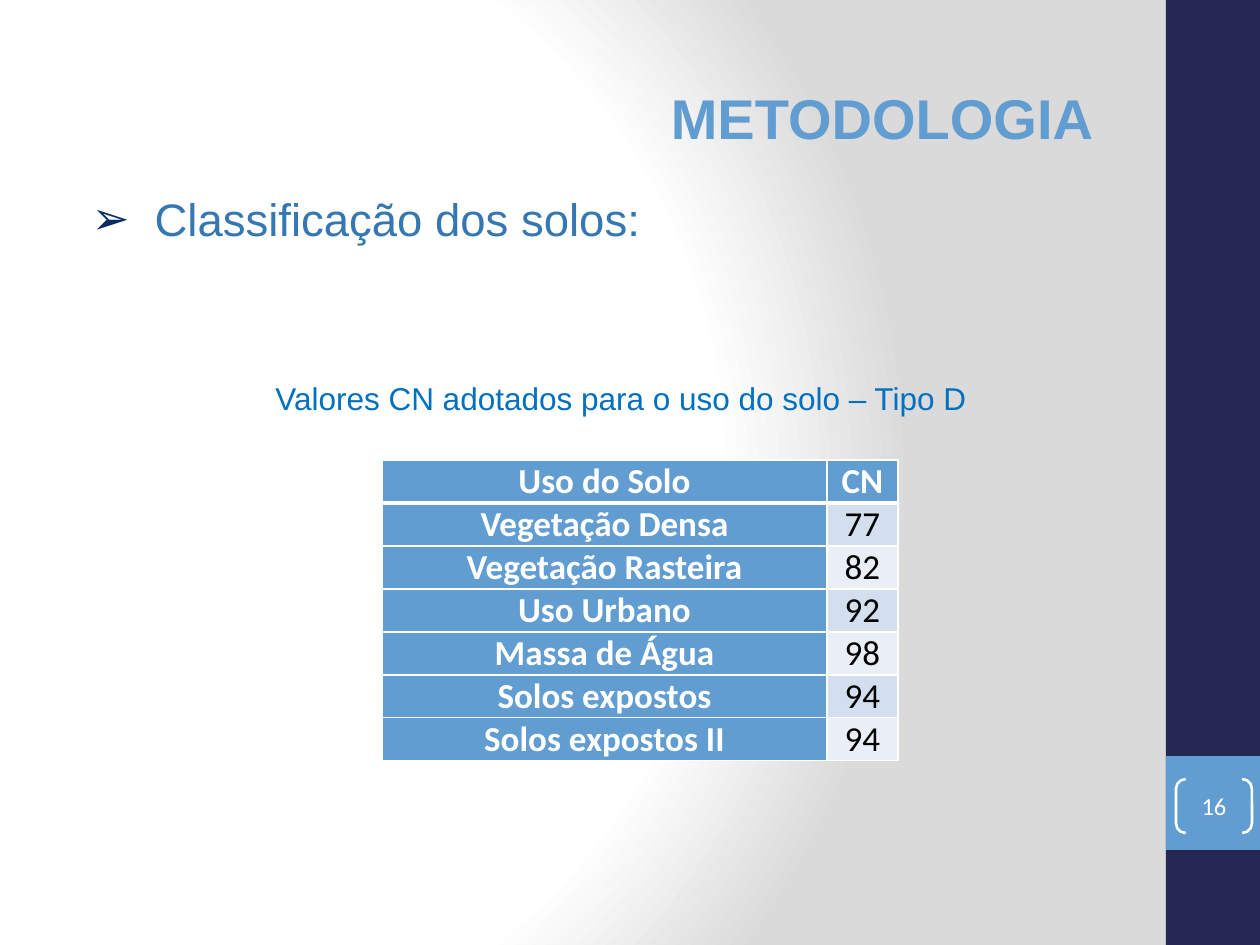
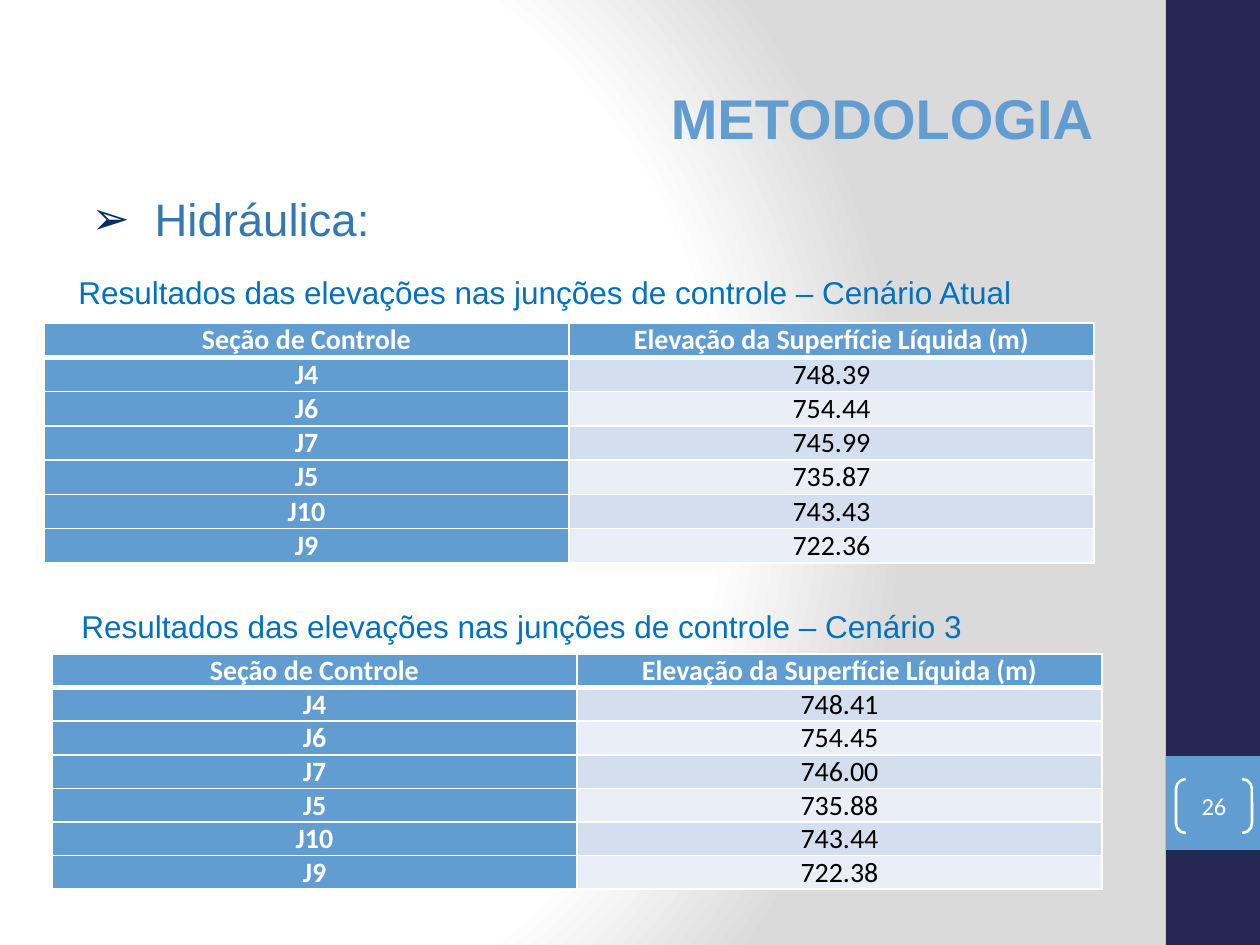
"""Build two methodology slides with soil classes and hydraulic results."""
from lxml import etree
from pptx import Presentation
from pptx.dml.color import RGBColor
from pptx.enum.shapes import MSO_SHAPE
from pptx.enum.text import MSO_ANCHOR, MSO_AUTO_SIZE, PP_ALIGN
from pptx.oxml import parse_xml
from pptx.oxml.ns import nsdecls, qn
from pptx.util import Emu, Pt

RECTANGLE = MSO_SHAPE.RECTANGLE
BRACKETS = MSO_SHAPE.DOUBLE_BRACKET
MIDDLE, TOP = MSO_ANCHOR.MIDDLE, MSO_ANCHOR.TOP
LEFT, CENTER = PP_ALIGN.LEFT, PP_ALIGN.CENTER
RIGHT, JUSTIFY = PP_ALIGN.RIGHT, PP_ALIGN.JUSTIFY
NO_AUTOFIT = MSO_AUTO_SIZE.NONE

WHITE = RGBColor(0xFF, 0xFF, 0xFF)
BLACK = RGBColor(0x00, 0x00, 0x00)
GRAY = RGBColor(0xDA, 0xDA, 0xDA)
NAVY = RGBColor(0x24, 0x28, 0x52)
SKY = RGBColor(0x62, 0x9D, 0xD1)
TOPIC_BLUE = RGBColor(0x34, 0x77, 0xB2)
BULLET_BLUE = RGBColor(0x07, 0x2C, 0x62)
CAPTION_BLUE = RGBColor(0x00, 0x70, 0xC0)
DARK_BAND = RGBColor(0xD3, 0xDF, 0xEE)
LIGHT_BAND = RGBColor(0xEA, 0xEF, 0xF7)

HEADING_FONT, TABLE_FONT = "Arial", "Calibri"
PX = 914400 / 126

SOIL_ROWS = [
    ("Uso do Solo", "CN"),
    ("Vegetação Densa", "77"),
    ("Vegetação Rasteira", "82"),
    ("Uso Urbano", "92"),
    ("Massa de Água", "98"),
    ("Solos expostos", "94"),
    ("Solos expostos II", "94"),
]
ELEVATION_HEADER = ("Seção de Controle", "Elevação da Superfície Líquida (m)")
SECTIONS = ("J4", "J6", "J7", "J5", "J10", "J9")
CURRENT_ELEVATIONS = ("748.39", "754.44", "745.99", "735.87", "743.43", "722.36")
SCENARIO_3_ELEVATIONS = ("748.41", "754.45", "746.00", "735.88", "743.44", "722.38")


def px(*lengths):
    return [Emu(round(length * PX)) for length in lengths]


class Deck:
    """Hold the shared style and the current slide."""

    def __init__(self):
        self.presentation = Presentation()
        self.presentation.slide_width, self.presentation.slide_height = px(1260, 945)
        self.slide = None
        self.set_background()

    def set_background(self):
        master = self.presentation.slide_master
        master.background.fill.solid()
        stops = "".join(
            f'<a:gs pos="{position}"><a:srgbClr val="{color}"/></a:gs>'
            for position, color in ((0, WHITE), (75000, WHITE), (100000, GRAY))
        )
        gradient = parse_xml(
            f'<a:gradFill {nsdecls("a")} rotWithShape="1"><a:gsLst>{stops}</a:gsLst>'
            '<a:path path="circle"><a:fillToRect l="20000" t="50000" r="100000" b="50000"/>'
            "</a:path></a:gradFill>"
        )
        properties = master.element.cSld.find(f'{qn("p:bg")}/{qn("p:bgPr")}')
        properties.replace(properties.find(qn("a:solidFill")), gradient)

    def style(self, paragraph, size, color, font=HEADING_FONT, bold=False, align=LEFT):
        paragraph.alignment = align
        paragraph.font.name = font
        paragraph.font.size = Pt(size)
        paragraph.font.bold = bold
        paragraph.font.color.rgb = color

    def place(self, shape, left, top, width, height):
        shape.left, shape.top, shape.width, shape.height = px(left, top, width, height)

    def add_slide(self, title, topic, number):
        layout = self.presentation.slide_layouts[1]
        self.slide = self.presentation.slides.add_slide(layout)
        self.add_band(0, 945, NAVY)
        self.add_band(756, 94, SKY)
        self.add_title(title)
        self.add_topic(topic)
        self.add_number(number)

    def add_band(self, top, height, color):
        band = self.slide.shapes.add_shape(RECTANGLE, *px(1166, top, 94, height))
        band.shadow.inherit = False
        band.fill.solid()
        band.fill.fore_color.rgb = color
        band.line.fill.background()

    def add_title(self, text):
        title = self.slide.shapes.title
        self.place(title, 63, 38, 1043, 158)
        frame = title.text_frame
        frame.text = text
        frame.vertical_anchor = MIDDLE
        frame.auto_size = NO_AUTOFIT
        self.style(frame.paragraphs[0], 32, SKY, bold=True, align=RIGHT)

    def add_topic(self, text):
        body = self.slide.placeholders[1]
        self.place(body, 64, 185, 1050, 678)
        frame = body.text_frame
        frame.text = text
        frame.vertical_anchor = TOP
        frame.auto_size = NO_AUTOFIT
        paragraph = frame.paragraphs[0]
        properties = paragraph._p.get_or_add_pPr()
        indent, hanging = px(78, -63)
        properties.set("marL", str(indent))
        properties.set("indent", str(hanging))
        color = etree.SubElement(properties, qn("a:buClr"))
        etree.SubElement(color, qn("a:srgbClr"), val=str(BULLET_BLUE))
        etree.SubElement(properties, qn("a:buFont"), typeface=HEADING_FONT)
        etree.SubElement(properties, qn("a:buChar"), char="➢")
        paragraph.space_before = Pt(0)
        self.style(paragraph, 26, TOPIC_BLUE, align=JUSTIFY)

    def add_number(self, number):
        brackets = self.slide.shapes.add_shape(BRACKETS, *px(1176, 779, 76, 54))
        brackets.adjustments[0] = 0.18
        brackets.shadow.inherit = False
        brackets.fill.background()
        brackets.line.color.rgb = WHITE
        brackets.line.width = Pt(1.5)
        frame = brackets.text_frame
        frame.margin_left = frame.margin_right = 0
        frame.margin_top = frame.margin_bottom = 0
        frame.vertical_anchor = MIDDLE
        frame.text = str(number)
        self.style(frame.paragraphs[0], 14, WHITE, TABLE_FONT, align=CENTER)

    def add_caption(self, text, left, top, width, align=LEFT):
        frame = self.slide.shapes.add_textbox(*px(left, top, width, 50)).text_frame
        frame.word_wrap = True
        frame.text = text
        self.style(frame.paragraphs[0], 18, CAPTION_BLUE, align=align)

    def add_table(self, rows, left, top, widths, row_height, size, line_spacing=1.0):
        height = row_height * len(rows)
        frame = self.slide.shapes.add_table(
            len(rows), len(widths), *px(left, top, sum(widths), height)
        )
        table = frame.table
        table.horz_banding = False
        for column, width in zip(table.columns, px(*widths)):
            column.width = width
        for row_index, values in enumerate(rows):
            table.rows[row_index].height = px(row_height)[0]
            for column_index, text in enumerate(values):
                cell = table.cell(row_index, column_index)
                self.fill_cell(cell, text, row_index, column_index, size)
                cell.text_frame.paragraphs[0].line_spacing = line_spacing

    def fill_cell(self, cell, text, row, column, size):
        heading = row == 0 or column == 0
        cell.text = text
        cell.vertical_anchor = MIDDLE
        cell.margin_left = cell.margin_right = px(6)[0]
        cell.margin_top = cell.margin_bottom = 0
        self.style(cell.text_frame.paragraphs[0], size, WHITE if heading else BLACK,
                   TABLE_FONT, heading, CENTER)
        self.add_borders(cell, row)
        cell.fill.solid()
        band = DARK_BAND if row % 2 else LIGHT_BAND
        cell.fill.fore_color.rgb = SKY if heading else band

    def add_borders(self, cell, row):
        properties = cell._tc.get_or_add_tcPr()
        thick_side = {0: "lnB", 1: "lnT"}.get(row)
        for side in ("lnL", "lnR", "lnT", "lnB"):
            width = Pt(3 if side == thick_side else 1)
            line = etree.SubElement(properties, qn(f"a:{side}"), w=str(width))
            fill = etree.SubElement(line, qn("a:solidFill"))
            etree.SubElement(fill, qn("a:srgbClr"), val=str(WHITE))


def elevation_rows(elevations):
    return [ELEVATION_HEADER, *zip(SECTIONS, elevations)]


def main():
    deck = Deck()
    deck.add_slide("METODOLOGIA", "Classificação dos solos:", 16)
    deck.add_table(SOIL_ROWS, 382, 460, (445, 71), 43, 20)
    deck.add_caption("Valores CN adotados para o uso do solo – Tipo D", 263, 373, 774, JUSTIFY)

    deck.add_slide("METODOLOGIA", "Hidráulica:", 26)
    caption = "Resultados das elevações nas junções de controle – Cenário "
    widths = (525, 525)
    deck.add_table(elevation_rows(CURRENT_ELEVATIONS), 44, 323, widths, 34, 16)
    deck.add_caption(caption + "Atual", 66, 267, 1043)
    deck.add_table(elevation_rows(SCENARIO_3_ELEVATIONS), 52, 654, widths, 33.6, 16, 0.98)
    deck.add_caption(caption + "3", 69, 601, 1040)
    deck.presentation.save("out.pptx")


if __name__ == "__main__":
    main()
